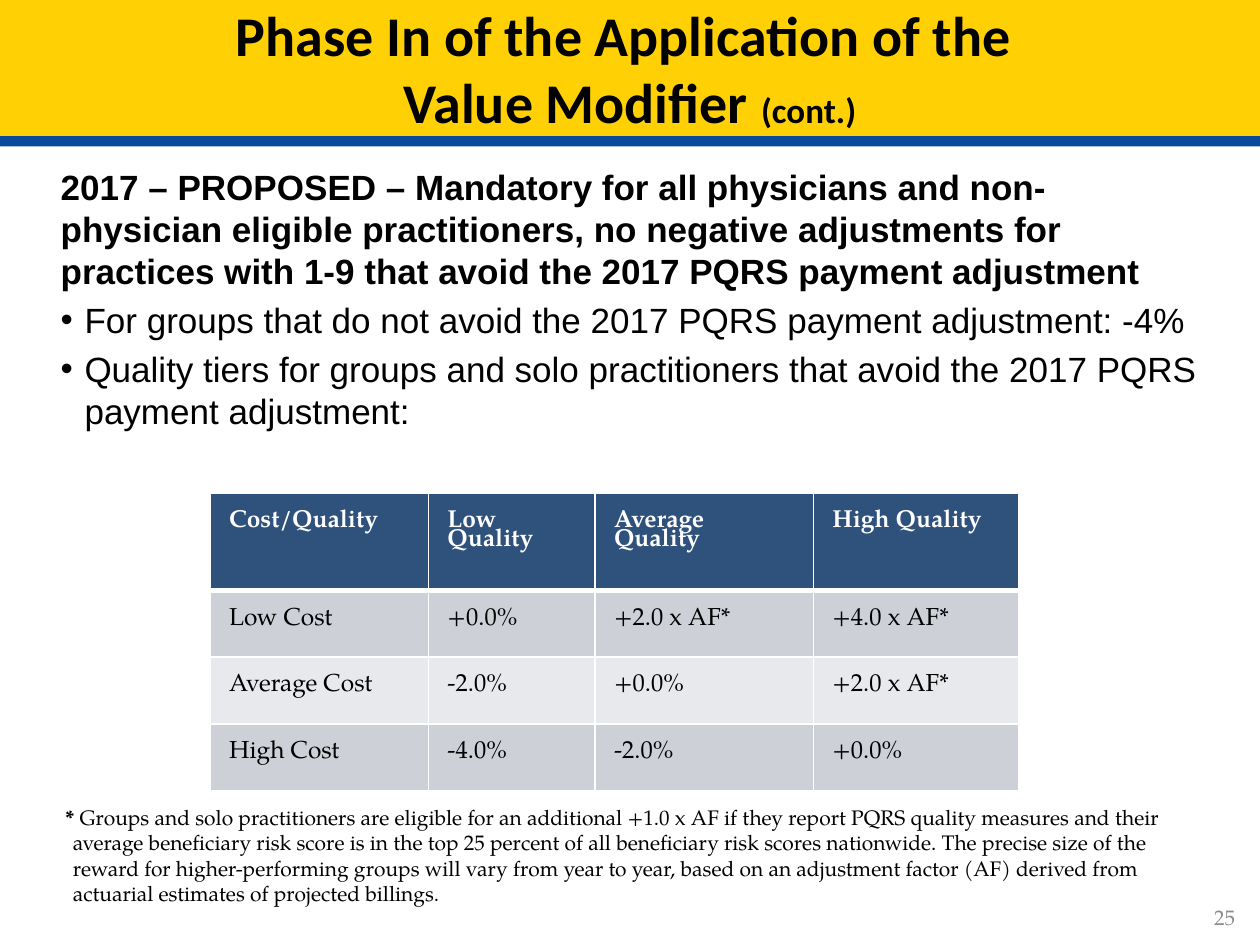
from collections import namedtuple
from dataclasses import dataclass

from lxml.etree import SubElement
from pptx import Presentation
from pptx.dml.color import RGBColor
from pptx.enum.text import MSO_ANCHOR as Anchor, MSO_AUTO_SIZE as AutoSize, PP_ALIGN as Align
from pptx.oxml.ns import qn
from pptx.util import Cm, Pt

Box = namedtuple("Box", "left top width height")


@dataclass(frozen=True)
class Theme:
    yellow: str = "FFD004"
    blue: str = "084A9C"
    navy: str = "2F527D"
    bands: tuple = ("CDD1D7", "E8E9EC")
    black: str = "000000"
    white: str = "FFFFFF"
    grey: str = "8C8C8C"
    title_font: str = "Calibri"
    body_font: str = "Arial"
    table_font: str = "TeX Gyre Pagella"
    title_size: int = 32
    body_size: int = 20
    table_size: int = 14
    note_size: int = 12


THEME = Theme()

POINTS = [
    "2017 – PROPOSED – Mandatory for all physicians and non-physician eligible "
    "practitioners, no negative adjustments for practices with 1-9 that avoid the "
    "2017 PQRS payment adjustment",
    "For groups that do not avoid the 2017 PQRS payment adjustment: -4%",
    "Quality tiers for groups and solo practitioners that avoid the 2017 PQRS "
    "payment adjustment:",
]
TIERS = [
    ["Cost/Quality", "Low Quality", "Average Quality", "High Quality"],
    ["Low Cost", "+0.0%", "+2.0 x AF*", "+4.0 x AF*"],
    ["Average Cost", "-2.0%", "+0.0%", "+2.0 x AF*"],
    ["High Cost", "-4.0%", "-2.0%", "+0.0%"],
]
FOOTNOTE = (
    "Groups and solo practitioners are eligible for an additional +1.0 x AF if they "
    "report PQRS quality measures and their average beneficiary risk score is in the "
    "top 25 percent of all beneficiary risk scores nationwide. The precise size of the "
    "reward for higher-performing groups will vary from year to year, based on an "
    "adjustment factor (AF) derived from actuarial estimates of projected billings."
)


def add_run(paragraph, text, font, size, color=THEME.black, bold=False):
    run = paragraph.add_run()
    run.text = text
    run.font.name, run.font.size, run.font.bold = font, Pt(size), bold
    run.font.color.rgb = RGBColor.from_string(color)


def place(shape, box):
    shape.left, shape.top, shape.width, shape.height = map(Cm, box)


def hang(paragraph, indent, bullet=None):
    """Set a hanging indent in cm, with a bullet or none."""
    props = paragraph._p.get_or_add_pPr()
    props.set("marL", str(Cm(indent)))
    props.set("indent", str(-Cm(indent)))
    if bullet:
        SubElement(props, qn("a:buChar"), char=bullet)
    else:
        SubElement(props, qn("a:buNone"))


def add_color(parent, color):
    SubElement(parent, qn("a:srgbClr"), val=color)


def title_banner(slide, box):
    title = slide.shapes.title
    place(title, box)
    title.fill.solid()
    title.fill.fore_color.rgb = RGBColor.from_string(THEME.yellow)
    effects = SubElement(title._element.spPr, qn("a:effectLst"))
    stripe = SubElement(effects, qn("a:outerShdw"), dist=str(Pt(6)), dir="5400000",
                        algn="ctr", rotWithShape="0")
    add_color(stripe, THEME.blue)
    frame = title.text_frame
    frame.auto_size, frame.vertical_anchor = AutoSize.NONE, Anchor.MIDDLE
    heading = frame.paragraphs[0]
    heading.alignment = Align.CENTER
    look = dict(font=THEME.title_font, bold=True)
    add_run(heading, "Phase In of the Application of the ", size=THEME.title_size, **look)
    heading.add_line_break()
    add_run(heading, "Value Modifier ", size=THEME.title_size, **look)
    add_run(heading, "(cont.)", size=THEME.body_size, **look)


def proposal_list(slide, box):
    body = slide.placeholders[1]
    place(body, box)
    frame = body.text_frame
    frame.auto_size = AutoSize.NONE
    for i, text in enumerate(POINTS):
        point = frame.add_paragraph() if i else frame.paragraphs[0]
        point.space_before = Pt(THEME.body_size * 0.2)
        point.line_spacing = Pt(24)
        if i:
            hang(point, 0.48, "•")
        else:
            hang(point, 0)
        add_run(point, text, THEME.body_font, THEME.body_size, bold=i == 0)


def border(cell, side, width):
    line = SubElement(cell._tc.get_or_add_tcPr(), qn(f"a:ln{side}"), w=str(Pt(width)))
    add_color(SubElement(line, qn("a:solidFill")), THEME.white)


def tier_table(slide, box, header_height=1.95):
    table = slide.shapes.add_table(len(TIERS), len(TIERS[0]), *map(Cm, box)).table
    for column, share in zip(table.columns, (0.27, 0.206, 0.27, 0.254)):
        column.width = Cm(box.width * share)
    row_height = (box.height - header_height) / (len(TIERS) - 1)
    for r, entries in enumerate(TIERS):
        header = r == 0
        table.rows[r].height = Cm(header_height if header else row_height)
        fill = THEME.navy if header else THEME.bands[(r - 1) % 2]
        for c, entry in enumerate(entries):
            cell = table.cell(r, c)
            cell.margin_left = cell.margin_right = Cm(0.38)
            cell.margin_top = cell.margin_bottom = Cm(0.38)
            for side in "LRTB":
                heavy = (header and side == "B") or (r == 1 and side == "T")
                border(cell, side, 3 if heavy else 1)
            cell.fill.solid()
            cell.fill.fore_color.rgb = RGBColor.from_string(fill)
            label = cell.text_frame.paragraphs[0]
            label.line_spacing = 0.8
            add_run(label, entry, THEME.table_font, THEME.table_size,
                    THEME.white if header else THEME.black, header)


def text_area(slide, box):
    frame = slide.shapes.add_textbox(*map(Cm, box)).text_frame
    frame.word_wrap = True
    return frame


def footnote(slide, box):
    note = text_area(slide, box).paragraphs[0]
    note.space_before = Pt(THEME.note_size * 0.2)
    hang(note, 0.15)
    add_run(note, "* ", THEME.table_font, THEME.note_size, bold=True)
    add_run(note, FOOTNOTE, THEME.table_font, THEME.note_size)


def page_number(slide, box):
    frame = text_area(slide, box)
    frame.vertical_anchor = Anchor.MIDDLE
    number = frame.paragraphs[0]
    number.alignment = Align.RIGHT
    add_run(number, "25", THEME.table_font, THEME.note_size, THEME.grey)


def main():
    deck = Presentation()
    deck.slide_width, deck.slide_height = Cm(25.4), Cm(19.05)
    slide = deck.slides.add_slide(deck.slide_layouts[1])
    title_banner(slide, Box(0, 0, 25.4, 2.74))
    proposal_list(slide, Box(0.97, 3.2, 23.6, 5.74))
    tier_table(slide, Box(4.24, 9.95, 16.3, 6))
    footnote(slide, Box(1.07, 16.1, 22.86, 2.31))
    page_number(slide, Box(19.23, 17.98, 5.92, 1.02))
    deck.save("out.pptx")


if __name__ == "__main__":
    main()
